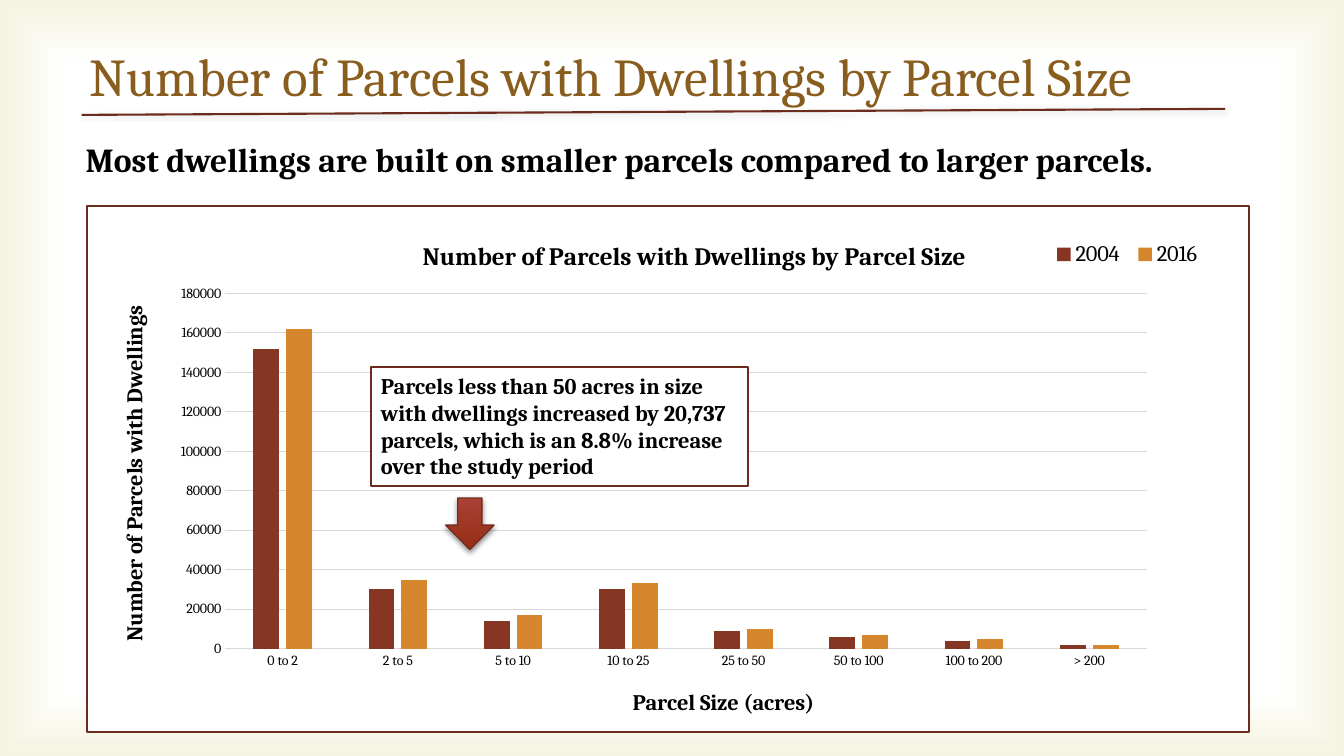
"""Build the slide on parcels with dwellings by parcel size."""
from lxml import etree
from pptx import Presentation
from pptx import util as u
from pptx.chart.data import CategoryChartData
from pptx.dml.color import RGBColor
from pptx.enum import chart as ch, shapes, text
from pptx.oxml import parse_xml
from pptx.oxml.ns import nsdecls, qn

COLORS = {"ink": "000000", "white": "FFFFFF", "title": "895D1D", "border": "6B2B1D",
          "grid": "D9D9D9", "2004": "873624", "2016": "D6862D", "glow": "F4F3DF",
          "arrow_top": "A94235", "arrow_low": "962D15", "arrow_edge": "742E1F"}
FONT = "Cambria"
HEADING = "Number of Parcels with Dwellings by Parcel Size"
SIZES = ["0 to 2", "2 to 5", "5 to 10", "10 to 25", "25 to 50", "50 to 100",
         "100 to 200", "> 200"]
PARCELS = {"2004": [152000, 30000, 14000, 30000, 9000, 6000, 4000, 2000],
           "2016": [162000, 35000, 17000, 33000, 10000, 7000, 5000, 2000]}


def rgb(name):
    return RGBColor.from_string(COLORS[name])


def style_font(font, size, color="ink", bold=False):
    font.name, font.size, font.bold = FONT, u.Pt(size), bold
    font.color.rgb = rgb(color)


def write(tf, words, size, anchor=text.MSO_ANCHOR.TOP, **fmt):
    tf.word_wrap = True
    tf.vertical_anchor = anchor
    p = tf.paragraphs[0]
    p.alignment = text.PP_ALIGN.LEFT
    r = p.add_run()
    r.text = words
    style_font(r.font, size, **fmt)


def place(el, after=None, inner=False, **fractions):
    for old in el.findall(qn("c:layout")):
        el.remove(old)
    target = '<c:layoutTarget val="inner"/>' if inner else ""
    modes = "".join(f'<c:{k}Mode val="edge"/>' for k in "xy")
    values = "".join(f'<c:{k} val="{v}"/>' for k, v in fractions.items())
    layout = parse_xml(f'<c:layout {nsdecls("c")}><c:manualLayout>{target}{modes}{values}'
                       '</c:manualLayout></c:layout>')
    if after:
        el.find(qn(after)).addnext(layout)
    else:
        el.insert(0, layout)


class Deck:
    """Holds the slide style and the current slide."""

    def __init__(self):
        self.prs = Presentation()
        self.prs.slide_width, self.prs.slide_height = u.Inches(13.33), u.Inches(7.5)
        self.s = self.prs.slides.add_slide(self.prs.slide_layouts[6])

    def box(self, *at):
        return [u.Inches(v) for v in at]

    def outline(self, line, color, width):
        line.color.rgb = rgb(color)
        line.width = u.Pt(width)

    def label(self, at, words, size, **fmt):
        sp = self.s.shapes.add_textbox(*self.box(*at))
        write(sp.text_frame, words, size, **fmt)

    def shape(self, kind, at, fill=None, line=None, width=1):
        sp = self.s.shapes.add_shape(kind, *self.box(*at))
        sp.shadow.inherit = False
        if fill:
            sp.fill.solid()
            sp.fill.fore_color.rgb = rgb(fill)
        if line:
            self.outline(sp.line, line, width)
        else:
            sp.line.fill.background()
        return sp

    def gradient(self, sp, stops, direction):
        sp.fill.background()
        marks = "".join(f'<a:gs pos="{pos * 1000}"><a:srgbClr val="{COLORS[c]}"/></a:gs>'
                        for pos, c in stops)
        old = sp._element.spPr.find(qn("a:noFill"))
        old.getparent().replace(old, parse_xml(
            f'<a:gradFill {nsdecls("a")} rotWithShape="1"><a:gsLst>{marks}</a:gsLst>'
            f'{direction}</a:gradFill>'))

    def shadow(self, sp, opacity, blur, dist):
        spPr = sp._element.spPr
        for old in spPr.findall(qn("a:effectLst")):
            spPr.remove(old)
        effects = etree.SubElement(spPr, qn("a:effectLst"))
        effects.append(parse_xml(
            f'<a:outerShdw {nsdecls("a")} blurRad="{u.Pt(blur)}" dist="{u.Pt(dist)}" '
            f'dir="5400000" rotWithShape="0"><a:srgbClr val="{COLORS["ink"]}">'
            f'<a:alpha val="{opacity * 1000}"/></a:srgbClr></a:outerShdw>'))

    def rule(self, start, end, color, width):
        sp = self.s.shapes.add_connector(shapes.MSO_CONNECTOR.STRAIGHT,
                                         *self.box(*start, *end))
        self.outline(sp.line, color, width)
        self.shadow(sp, 15, 3, 1)

    def axis(self, axis, title, **where):
        write(axis.axis_title.text_frame, title, 16, bold=True)
        place(axis.axis_title._element, "c:tx", **where)
        axis.major_tick_mark = axis.minor_tick_mark = ch.XL_TICK_MARK.NONE
        style_font(axis.tick_labels.font, 10)

    def columns(self, at, title):
        data = CategoryChartData()
        data.categories = SIZES
        for year, counts in PARCELS.items():
            data.add_series(year, counts)
        chart = self.s.shapes.add_chart(ch.XL_CHART_TYPE.COLUMN_CLUSTERED,
                                        *self.box(*at), data).chart
        style_font(chart.font, 10)
        write(chart.chart_title.text_frame, title, 18, bold=True)
        place(chart.chart_title._element, "c:tx", x=0.285, y=0.055)
        chart.has_legend = True
        chart.legend.position = ch.XL_LEGEND_POSITION.BOTTOM
        chart.legend.include_in_layout = False
        style_font(chart.legend.font, 16)
        place(chart.legend._element, "c:legendPos", x=0.825, y=0.06, w=0.14, h=0.065)

        plot = chart.plots[0]
        plot.gap_width, plot.overlap, plot.vary_by_categories = 219, -27, False
        for series in plot.series:
            series.format.fill.solid()
            series.format.fill.fore_color.rgb = rgb(series.name)
        place(chart._chartSpace.chart.plotArea, inner=True, x=0.119, y=0.167, w=0.793, h=0.675)

        cat, val = chart.category_axis, chart.value_axis
        self.axis(cat, "Parcel Size (acres)", x=0.466, y=0.91)
        self.axis(val, "Number of Parcels with Dwellings", x=0.025, y=0.184)
        self.outline(cat.format.line, "grid", 0.75)
        val.format.line.fill.background()
        val.minimum_scale, val.maximum_scale, val.major_unit = 0, 180000, 20000
        self.outline(val.major_gridlines.format.line, "grid", 0.75)

        frame = parse_xml(
            f'<c:spPr {nsdecls("c", "a")}><a:solidFill><a:srgbClr val="{COLORS["white"]}"/>'
            f'</a:solidFill><a:ln w="{u.Pt(1.5)}"><a:solidFill>'
            f'<a:srgbClr val="{COLORS["border"]}"/></a:solidFill></a:ln></c:spPr>')
        chart._chartSpace.chart.addnext(frame)


def main():
    deck = Deck()
    rect = shapes.MSO_SHAPE.RECTANGLE
    backdrop = deck.shape(rect, (0, 0, 13.33, 7.5))
    deck.gradient(backdrop, [(0, "white"), (83, "white"), (100, "glow")],
                  '<a:path path="rect"><a:fillToRect l="50000" t="50000" r="50000" '
                  'b="50000"/></a:path>')
    deck.label((0.79, 0.17, 11.77, 1.15), HEADING, 38, color="title",
               anchor=text.MSO_ANCHOR.MIDDLE)
    deck.columns((0.85, 2.03, 11.55, 5.24), HEADING)
    deck.label((0.75, 1.33, 11.71, 0.88),
               "Most dwellings are built on smaller parcels compared to larger parcels.",
               24, bold=True)
    deck.rule((0.81, 1.14), (12.15, 1.08), "border", 1.5)
    callout = deck.shape(rect, (3.68, 3.64, 3.74, 1.18), "white", "border", 1.5)
    write(callout.text_frame, "Parcels less than 50 acres in size with dwellings increased "
          "by 20,737 parcels, which is an 8.8% increase over the study period", 16, bold=True)
    arrow = deck.shape(shapes.MSO_SHAPE.DOWN_ARROW, (4.42, 4.94, 0.48, 0.51),
                       line="arrow_edge")
    deck.gradient(arrow, [(0, "arrow_top"), (100, "arrow_low")],
                  '<a:lin ang="5160000" scaled="0"/>')
    deck.shadow(arrow, 46, 4, 2)
    deck.prs.save("out.pptx")


if __name__ == "__main__":
    main()
